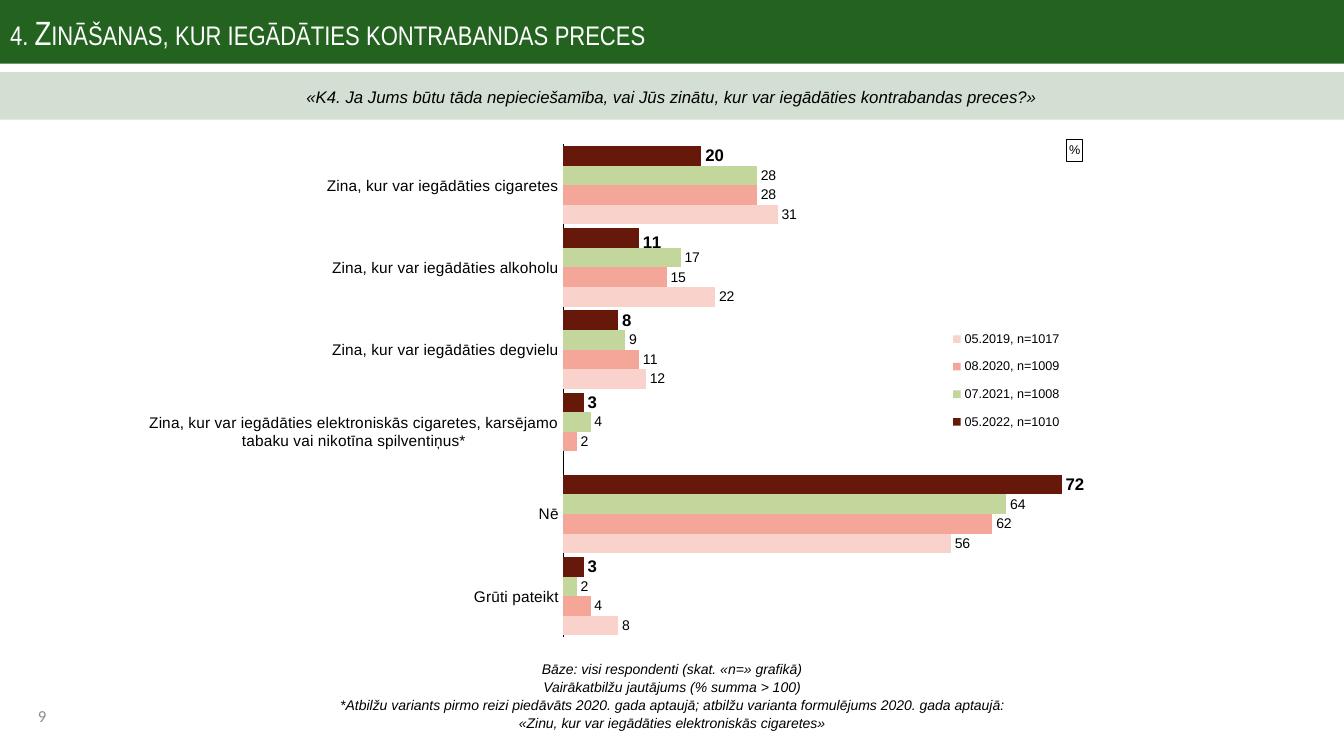
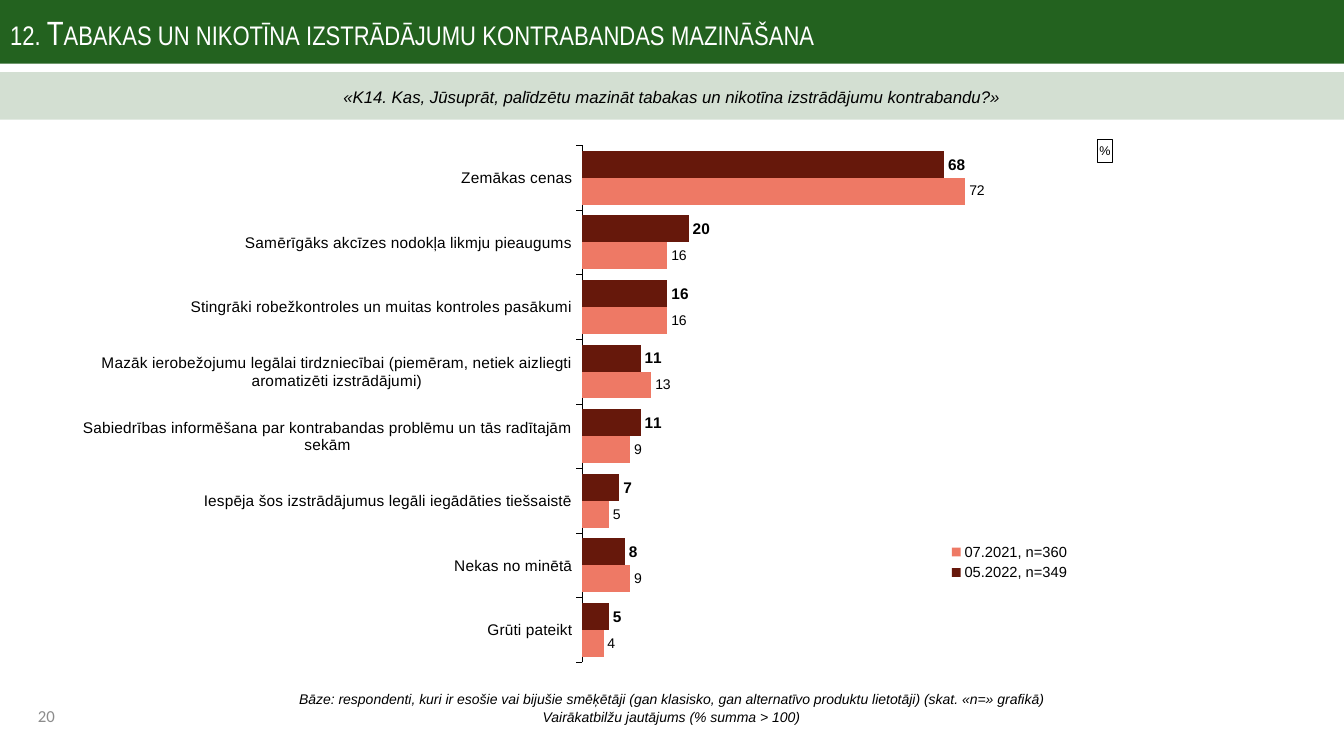
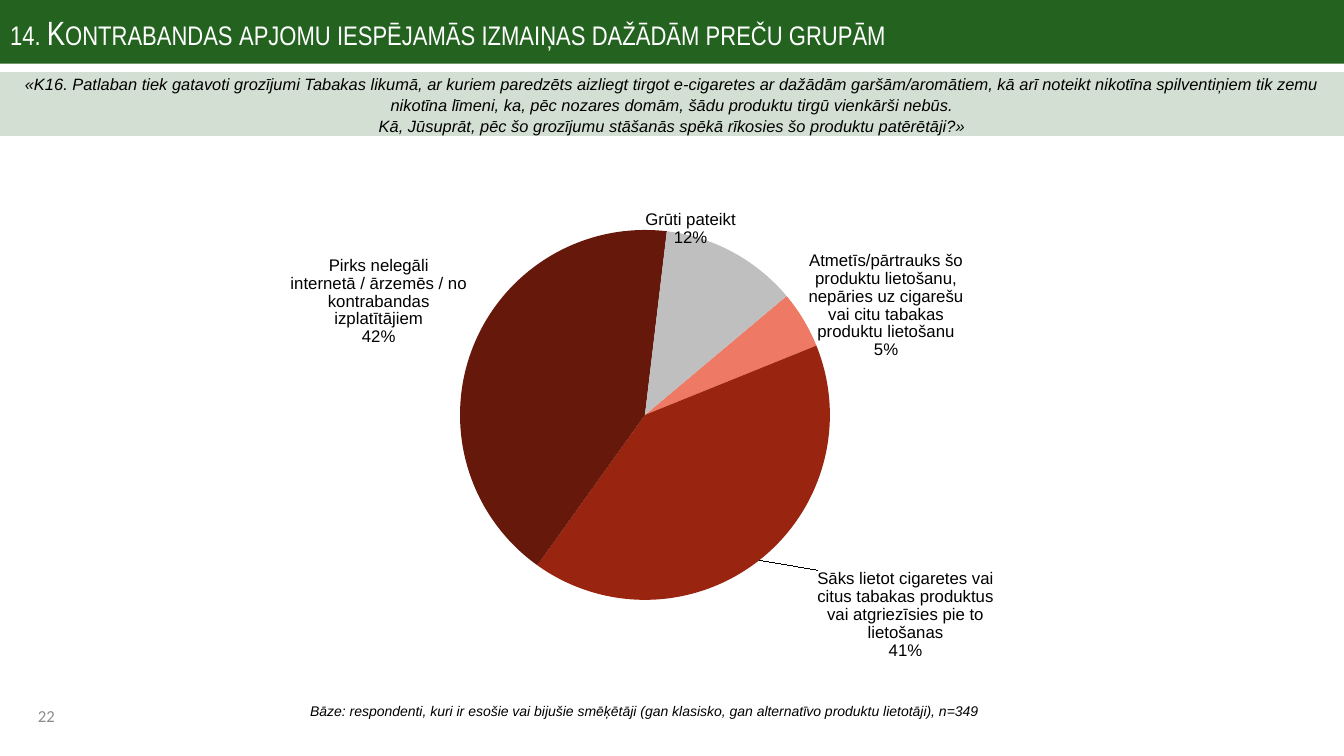
from lxml.etree import SubElement
from pptx import Presentation
from pptx.chart.data import CategoryChartData as ChartData
from pptx.dml.color import RGBColor
from pptx.enum.chart import XL_CHART_TYPE as CHART, XL_LABEL_POSITION as LABEL
from pptx.enum.chart import XL_LEGEND_POSITION as LEGEND, XL_TICK_MARK as TICK
from pptx.enum.shapes import MSO_SHAPE as SHAPE
from pptx.enum.text import MSO_ANCHOR as ANCHOR, MSO_AUTO_SIZE as FIT, PP_ALIGN as ALIGN
from pptx.oxml.ns import qn
from pptx.util import Pt

color = RGBColor.from_string
GREEN, BLACK, WHITE, GREY = "23621F", "000000", "FFFFFF", "8C8C8C"
MAROON, CORAL = "66180B", "EE7965"
WIDTH, HEIGHT = 960, 540


def write(box, text, size=12, font="Arial", ink=BLACK, italic=False, align=ALIGN.LEFT,
          anchor=ANCHOR.MIDDLE, spacing=1.0, caps="none"):
    frame = box.text_frame
    frame.word_wrap = True
    frame.auto_size = FIT.NONE
    frame.vertical_anchor = anchor
    for index, line in enumerate(text.split("\n")):
        para = frame.add_paragraph() if index else frame.paragraphs[0]
        para.text = line
        para.alignment = align
        para.line_spacing = spacing
        for span in para.runs:
            span.font.size = Pt(size)
            span.font.name = font
            span.font.bold = False
            span.font.italic = italic
            span.font.color.rgb = color(ink)
            span.font._element.set("cap", caps)


def place(parent, index, x, y, w=None, h=None, inner=False, edge=True):
    for old in parent.findall(qn("c:layout")):
        parent.remove(old)
    layout = SubElement(parent, qn("c:layout"))
    parent.insert(index, layout)
    manual = SubElement(layout, qn("c:manualLayout"))
    settings = [("layoutTarget", "inner" if inner else None),
                ("xMode", "edge" if edge else None), ("yMode", "edge" if edge else None),
                ("x", x), ("y", y), ("w", w), ("h", h)]
    for name, value in settings:
        if value is not None:
            SubElement(manual, qn("c:" + name)).set("val", str(value))


pages = [
    dict(number="9", title="4. Zināšanas, kur iegādāties kontrabandas preces",
         question="«K4. Ja Jums būtu tāda nepieciešamība, vai Jūs zinātu, kur var iegādāties "
                  "kontrabandas preces?»",
         size=12, band=34,
         note="Bāze: visi respondenti (skat. «n=» grafikā)\n"
              "Vairākatbilžu jautājums (% summa > 100)\v"
              "*Atbilžu variants pirmo reizi piedāvāts 2020. gada aptaujā; "
              "atbilžu varianta formulējums 2020. gada aptaujā:\v"
              "«Zinu, kur var iegādāties elektroniskās cigaretes»",
         spot=(120, 479.5)),
    dict(number="20", title="12. Tabakas un nikotīna izstrādājumu kontrabandas mazināšana",
         question="«K14. Kas, Jūsuprāt, palīdzētu mazināt tabakas un nikotīna izstrādājumu "
                  "kontrabandu?»",
         size=12, band=34,
         note="Bāze: respondenti, kuri ir esošie vai bijušie smēķētāji (gan klasisko, gan "
              "alternatīvo produktu lietotāji) (skat. «n=» grafikā)\n"
              "Vairākatbilžu jautājums (% summa > 100)",
         spot=(119.5, 488)),
    dict(number="22", title="14. Kontrabandas apjomu iespējamās izmaiņas dažādām preču grupām",
         question="«K16. Patlaban tiek gatavoti grozījumi Tabakas likumā, ar kuriem paredzēts "
                  "aizliegt tirgot e-cigaretes ar dažādām garšām/aromātiem, kā arī noteikt "
                  "nikotīna spilventiņiem tik zemu nikotīna līmeni, ka, pēc nozares domām, šādu "
                  "produktu tirgū vienkārši nebūs.\v"
                  "Kā, Jūsuprāt, pēc šo grozījumu stāšanās spēkā rīkosies šo produktu patērētāji?»",
         size=11.7, band=45.5,
         note="Bāze: respondenti, kuri ir esošie vai bijušie smēķētāji (gan klasisko, gan "
              "alternatīvo produktu lietotāji), n=349",
         spot=(100, 490.5)),
]

deck = Presentation()
deck.slide_width, deck.slide_height = Pt(WIDTH), Pt(HEIGHT)

for content in pages:
    page = deck.slides.add_slide(deck.slide_layouts[5])
    title = page.shapes.title
    title.left, title.top, title.width, title.height = Pt(0), Pt(0), Pt(WIDTH), Pt(45.5)
    title.fill.solid()
    title.fill.fore_color.rgb = color(GREEN)
    write(title, content["title"], size=24, font="Arial Narrow", ink=WHITE, caps="small")

    band = page.shapes.add_shape(SHAPE.RECTANGLE, Pt(0), Pt(51.5), Pt(WIDTH), Pt(content["band"]))
    band.shadow.inherit = False
    band.line.fill.background()
    band.fill.solid()
    band.fill.fore_color.rgb = color(GREEN)
    tint = band.element.spPr.find(qn("a:solidFill")).find(qn("a:srgbClr"))
    SubElement(tint, qn("a:alpha")).set("val", "20000")
    write(band, content["question"], size=content["size"], italic=True,
          align=ALIGN.CENTER, spacing=1.07)

    left, top = content["spot"]
    note = page.shapes.add_textbox(Pt(left), Pt(top), Pt(720), Pt(34))
    write(note, content["note"], size=10, italic=True, align=ALIGN.CENTER, spacing=1.07)

    number = page.shapes.add_textbox(Pt(20), Pt(500.5), Pt(102), Pt(29))
    write(number, content["number"], font="Calibri", ink=GREY, anchor=ANCHOR.TOP)

bar_charts = [
    dict(at=(78, 92, 720, 367), gap=20, top_value=80, tick=TICK.NONE, strong=12, legend_size=9,
         plot=(0.45, 0.03, 0.55, 0.96), title=(0.95, 0.02), legend=(0.83, 0.37, 0.12, 0.24),
         categories=["Zina, kur var iegādāties cigaretes", "Zina, kur var iegādāties alkoholu",
                     "Zina, kur var iegādāties degvielu",
                     "Zina, kur var iegādāties elektroniskās cigaretes, karsējamo tabaku "
                     "vai nikotīna spilventiņus*",
                     "Nē", "Grūti pateikt"],
         series=[("05.2022, n=1010", (20, 11, 8, 3, 72, 3), MAROON),
                 ("07.2021, n=1008", (28, 17, 9, 4, 64, 2), "C3D69B"),
                 ("08.2020, n=1009", (28, 15, 11, 2, 62, 4), "F4A698"),
                 ("05.2019, n=1017", (31, 22, 12, None, 56, 8), "F9D2CC")]),
    dict(at=(32.5, 92, 782.5, 397), gap=40, top_value=105, tick=TICK.OUTSIDE, strong=11,
         legend_size=10.5,
         plot=(0.49, 0.03, 0.51, 0.93), title=(0.96, 0.02), legend=(0.82, 0.74, 0.12, 0.08),
         categories=["Zemākas cenas", "Samērīgāks akcīzes nodokļa likmju pieaugums",
                     "Stingrāki robežkontroles un muitas kontroles pasākumi",
                     "Mazāk ierobežojumu legālai tirdzniecībai (piemēram, netiek aizliegti "
                     "aromatizēti izstrādājumi)",
                     "Sabiedrības informēšana par kontrabandas problēmu un tās radītajām sekām",
                     "Iespēja šos izstrādājumus legāli iegādāties tiešsaistē",
                     "Nekas no minētā", "Grūti pateikt"],
         series=[("05.2022, n=349", (68, 20, 16, 11, 11, 7, 8, 5), MAROON),
                 ("07.2021, n=360", (72, 16, 16, 13, 9, 5, 9, 4), CORAL)]),
]

for page, setup in zip(deck.slides, bar_charts):
    data = ChartData(number_format="0")
    data.categories = setup["categories"]
    for name, values, _ in setup["series"]:
        data.add_series(name, values)
    chart = page.shapes.add_chart(CHART.BAR_CLUSTERED, *map(Pt, setup["at"]), data).chart
    chart.font.name, chart.font.size = "Arial", Pt(9)
    chart.font.color.rgb = color(BLACK)

    chart.has_title = True
    heading = chart.chart_title
    write(heading, "%", size=9, align=ALIGN.CENTER)
    heading.format.line.color.rgb = color(BLACK)
    heading.format.line.width = Pt(0.75)
    place(chart.element.xpath("c:chart/c:title")[0], 1, *setup["title"])

    chart.has_legend = True
    chart.legend.position = LEGEND.RIGHT
    chart.legend.include_in_layout = False
    chart.legend.font.size = Pt(setup["legend_size"])
    chart.legend.font.name = "Arial"
    chart.legend.font.color.rgb = color(BLACK)
    place(chart.element.xpath("c:chart/c:legend")[0], 1, *setup["legend"])
    place(chart.element.xpath("c:chart/c:plotArea")[0], 0, *setup["plot"], inner=True)

    names = chart.category_axis
    names.reverse_order = True
    names.major_tick_mark = setup["tick"]
    names.tick_labels.font.size = Pt(11)
    names.tick_labels.font.name = "Arial"
    names.tick_labels.font.color.rgb = color(BLACK)
    names.format.line.color.rgb = color(BLACK)
    names.format.line.width = Pt(0.25)
    scale = chart.value_axis
    scale.minimum_scale, scale.maximum_scale, scale.major_unit = 0, setup["top_value"], 20
    scale.has_major_gridlines = False
    scale.visible = False

    bars = chart.plots[0]
    bars.gap_width, bars.overlap = setup["gap"], 0
    bars.vary_by_categories = False
    for index, (series, (_, _, fill)) in enumerate(zip(bars.series, setup["series"])):
        series.format.fill.solid()
        series.format.fill.fore_color.rgb = color(fill)
        labels = series.data_labels
        labels.show_value = True
        labels.number_format, labels.number_format_is_linked = "0", False
        labels.position = LABEL.OUTSIDE_END
        labels.font.name = "Arial"
        labels.font.size = Pt(10 if index else setup["strong"])
        labels.font.bold = index == 0
        labels.font.color.rgb = color(BLACK)

    if page == deck.slides[0]:
        alcohol = bars.series[0].points[1].data_label
        alcohol.font.size, alcohol.font.bold, alcohol.font.name = Pt(12), True, "Arial"
        alcohol.position = LABEL.OUTSIDE_END
        place(chart.element.xpath(".//c:dLbl")[0], 1, 0, 0.01, edge=False)

answers = [
    ("Atmetīs/pārtrauks šo produktu lietošanu, nepāries uz cigarešu vai citu tabakas "
     "produktu lietošanu", 5, CORAL, (0, 0.08)),
    ("Sāks lietot cigaretes vai citus tabakas produktus vai atgriezīsies pie to lietošanas",
     41, "992410", (0.06, 0.01)),
    ("Pirks nelegāli internetā / ārzemēs / no kontrabandas izplatītājiem", 42, MAROON, None),
    ("Grūti pateikt", 12, "BFBFBF", (-0.1, 0)),
]
data = ChartData(number_format="0")
data.categories = [answer for answer, _, _, _ in answers]
data.add_series("Series 1", [share for _, share, _, _ in answers])
chart = deck.slides[2].shapes.add_chart(
    CHART.PIE, Pt(179.5), Pt(111.5), Pt(646.5), Pt(377.5), data).chart
chart.has_title = False
chart.has_legend = False
chart.font.name, chart.font.size = "Arial", Pt(10)
chart.font.color.rgb = color(BLACK)
place(chart.element.xpath("c:chart/c:plotArea")[0], 0, 0.22, 0.14, 0.43, 0.7, inner=True)
pie = chart.plots[0]
pie.vary_by_categories = True
SubElement(chart.element.xpath(".//c:pieChart")[0], qn("c:firstSliceAng")).set("val", "50")

slices = pie.series[0]
labels = slices.data_labels
labels.show_value = False
labels.show_category_name = labels.show_percentage = True
labels.number_format, labels.number_format_is_linked = "0%", False
labels.position = LABEL.OUTSIDE_END
labels.font.size, labels.font.name = Pt(12), "Arial"
labels.font.color.rgb = color(BLACK)

for index, (_, _, fill, shift) in enumerate(answers):
    point = slices.points[index]
    point.format.fill.solid()
    point.format.fill.fore_color.rgb = color(fill)
    if shift:
        point.data_label.font.size, point.data_label.font.name = Pt(12), "Arial"
        point.data_label.position = LABEL.OUTSIDE_END
        label = chart.element.xpath(f".//c:dLbl[c:idx/@val='{index}']")[0]
        place(label, 1, *shift, edge=False)
        for name, shown in (("showVal", "0"), ("showCatName", "1"), ("showPercent", "1")):
            label.find(qn("c:" + name)).set("val", shown)

for group in chart.element.xpath(".//c:dLbls | .//c:dLbl"):
    separator = SubElement(group, qn("c:separator"))
    separator.text = "\n"
    shown = group.find(qn("c:showBubbleSize"))
    if shown is None:
        shown = group.find(qn("c:showPercent"))
    shown.addnext(separator)

deck.save("out.pptx")
